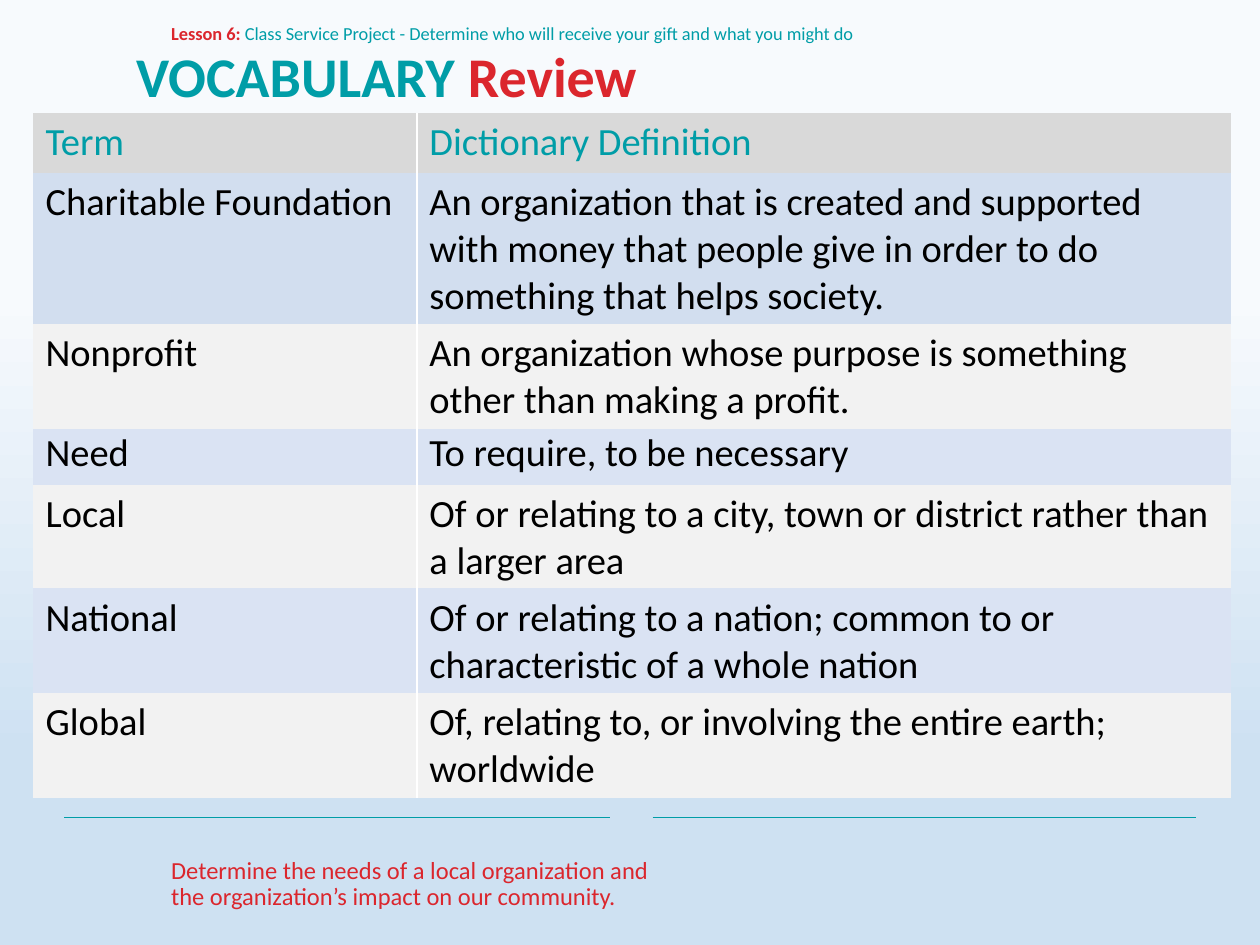
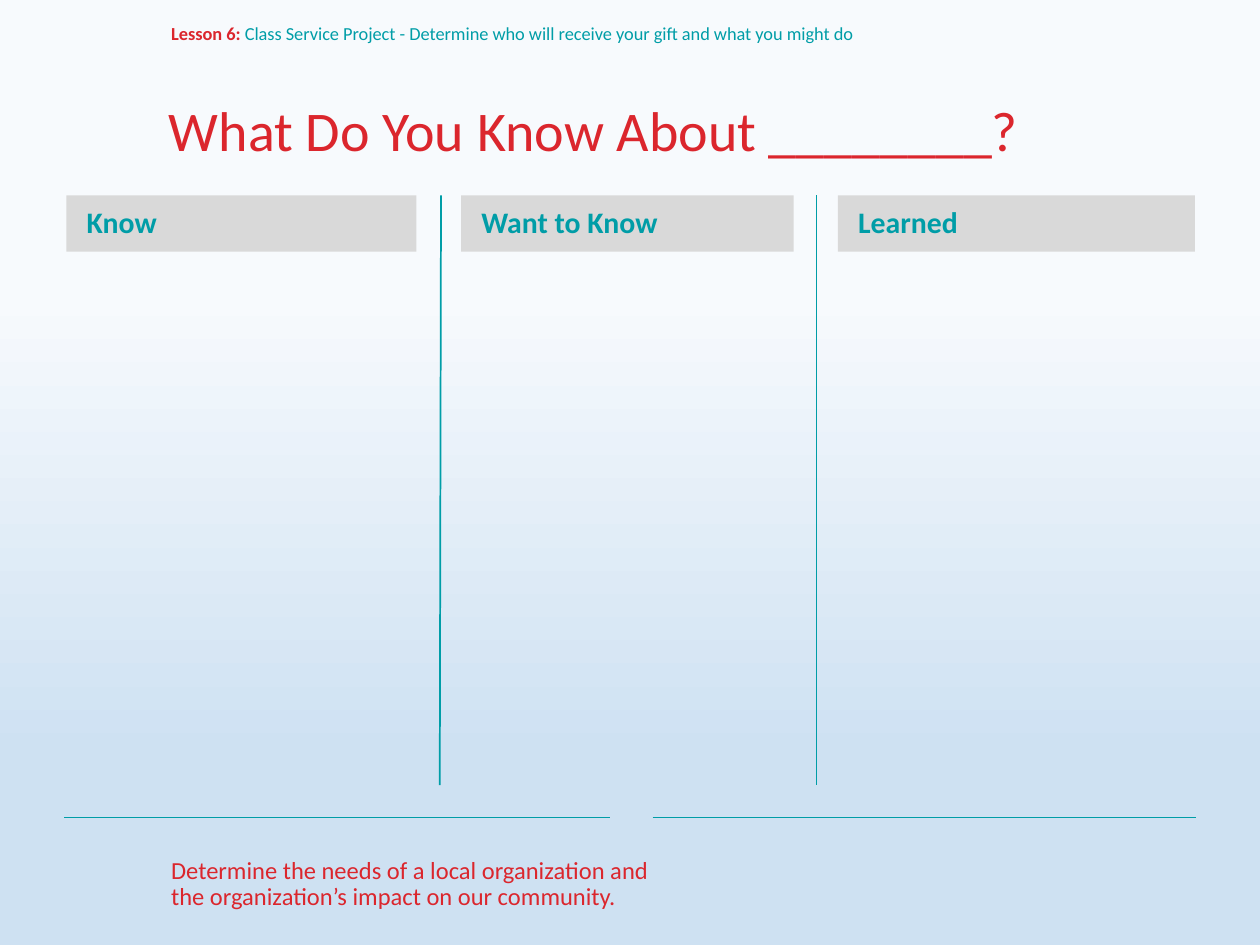
from typing import NamedTuple

from lxml.etree import SubElement
from pptx import Presentation
from pptx.dml.color import RGBColor
from pptx.enum.shapes import MSO_CONNECTOR, MSO_SHAPE
from pptx.enum.text import MSO_ANCHOR, MSO_AUTO_SIZE, PP_ALIGN
from pptx.oxml import parse_xml
from pptx.oxml.ns import nsdecls, qn
from pptx.util import Pt

COLORS = {
    "teal": "009DA7",
    "red": "DB262D",
    "black": "000000",
    "white": "FFFFFF",
    "header": "D9D9D9",
    "blue": "D2DEEF",
    "pale_blue": "DAE3F3",
    "grey": "F2F2F2",
    "sky_top": "F7FAFD",
    "sky_bottom": "CEE1F2",
}
FONT = "Calibri"
NO_TABLE_STYLE = "{2D5ABB26-0587-4C30-8999-92F81FD0307C}"


class Box(NamedTuple):
    left: float
    top: float
    width: float
    height: float

    def emu(self) -> list:
        return [Pt(v) for v in self]


class Run(NamedTuple):
    text: str
    color: str
    bold: bool = False


class Entry(NamedTuple):
    term: str
    definition: str
    height: float
    fill: str
    color: str = "black"


class VocabTable(NamedTuple):
    top: float
    entries: list[Entry]


class Column(NamedTuple):
    label: str
    left: float
    width: float


# Shared layout
FOOTER_LINES = [(36.7, 348.5), (373, 683.3)]
FOOTER_Y = 467.3
FOOTER_BOX = Box(90.7, 486.7, 290.2, 49)
LESSON_BOX = Box(90.7, 10.8, 430.6, 18.7)
FOOTER = [Run("Determine the needs of a local organization and "
              "the organization’s impact on our community.", "red")]
LESSON = [
    Run("Lesson 6: ", "red", True),
    Run("Class Service Project - Determine who will receive your gift "
        "and what you might do", "teal"),
]

# Vocabulary tables, from back to front: each one covers the overflow it meets
TABLE_LEFT = 18.9
TABLE_COLS = (219.3, 465.1)
VOCABULARY = [
    VocabTable(64.3, [
        Entry("Term", "Dictionary Definition", 34.6, "header", "teal"),
        Entry("Charitable Foundation",
              "An organization that is created and supported with money that "
              "people give in order to do something that helps society.",
              86.4, "blue"),
    ]),
    VocabTable(276.8, [
        Entry("Local", "Of or relating to a city, town or district rather "
              "than a larger area", 59.8, "grey")]),
    VocabTable(242, [
        Entry("Need", "To require, to be necessary", 35.3, "pale_blue")]),
    VocabTable(185, [
        Entry("Nonprofit", "An organization whose purpose is something other "
              "than making a profit.", 59.8, "grey")]),
    VocabTable(336.2, [
        Entry("National", "Of or relating to a nation; common to or "
              "characteristic of a whole nation", 59.8, "pale_blue")]),
    VocabTable(396, [
        Entry("Global", "Of, relating to, or involving the entire earth; "
              "worldwide", 59.8, "grey")]),
]

# Know / Want to Know / Learned chart
KWL_TOP, KWL_BOTTOM, KWL_HEAD = 111.6, 448.6, 32.2
KWL_COLUMNS = [
    Column("Know", 38, 200),
    Column("Want to Know", 263.5, 190),
    Column("Learned", 478.8, 204),
]
KWL_DIVIDERS = [(252, 251.3), (466.6, 466.6)]


def rgb(name: str) -> RGBColor:
    return RGBColor.from_string(COLORS[name])


def put_text(tf, runs: list[Run], *, size: float, spacing: float = 0.9,
             anchor=MSO_ANCHOR.TOP) -> None:
    """Fill a text frame with one left-aligned paragraph."""
    tf.word_wrap = True
    tf.vertical_anchor = anchor
    p = tf.paragraphs[0]
    p.alignment = PP_ALIGN.LEFT
    p.line_spacing = spacing
    p.space_before = Pt(0)
    for run in runs:
        r = p.add_run()
        r.text = run.text
        r.font.name = FONT
        r.font.size = Pt(size)
        r.font.bold = run.bold
        r.font.color.rgb = rgb(run.color)


def add_text(s, box: Box, runs: list[Run], size: float) -> None:
    put_text(s.shapes.add_textbox(*box.emu()).text_frame, runs, size=size)


def add_line(s, x1: float, y1: float, x2: float, y2: float,
             width: float) -> None:
    line = s.shapes.add_connector(MSO_CONNECTOR.STRAIGHT,
                                  Pt(x1), Pt(y1), Pt(x2), Pt(y2))
    line.line.color.rgb = rgb("teal")
    line.line.width = Pt(width)
    SubElement(line._element.spPr, qn("a:effectLst"))


def set_background(prs) -> None:
    fill = prs.slide_master.background.fill
    fill.gradient()
    fill.gradient_angle = 270
    stops = [("sky_top", 0.31), ("sky_bottom", 0.8)]
    for stop, (color, position) in zip(fill.gradient_stops, stops):
        stop.color.rgb = rgb(color)
        stop.position = position


def add_slide(prs, title: list[Run], title_box: Box):
    """Add a slide with the shared footer, lesson line and title."""
    s = prs.slides.add_slide(prs.slide_layouts[5])
    for x1, x2 in FOOTER_LINES:
        add_line(s, x1, FOOTER_Y, x2, FOOTER_Y, 0.5)
    add_text(s, FOOTER_BOX, FOOTER, 14)
    add_text(s, LESSON_BOX, LESSON, 10.5)
    sp = s.shapes.title
    sp.left, sp.top, sp.width, sp.height = title_box.emu()
    sp.text_frame.auto_size = MSO_AUTO_SIZE.NONE
    put_text(sp.text_frame, title, size=32)
    return s


def add_border(cell, side: str) -> None:
    cell._tc.get_or_add_tcPr().insert(0, parse_xml(
        f'<a:{side} {nsdecls("a")} w="12700"><a:solidFill>'
        f'<a:srgbClr val="{COLORS["white"]}"/></a:solidFill></a:{side}>'))


def add_vocab_table(s, vocab: VocabTable) -> None:
    entries = vocab.entries
    box = Box(TABLE_LEFT, vocab.top, sum(TABLE_COLS),
              sum(e.height for e in entries))
    table = s.shapes.add_table(len(entries), len(TABLE_COLS),
                               *box.emu()).table
    table.first_row = table.horz_banding = False
    table._tbl.tblPr.find(qn("a:tableStyleId")).text = NO_TABLE_STYLE
    for column, width in zip(table.columns, TABLE_COLS):
        column.width = Pt(width)
    for i, entry in enumerate(entries):
        table.rows[i].height = Pt(entry.height)
        for j, text in enumerate((entry.term, entry.definition)):
            cell = table.cell(i, j)
            cell.fill.solid()
            cell.fill.fore_color.rgb = rgb(entry.fill)
            add_border(cell, ("lnR", "lnL")[j])
            put_text(cell.text_frame, [Run(text, entry.color)], size=22,
                     spacing=1.0)


def add_column_head(s, column: Column) -> None:
    box = Box(column.left, KWL_TOP, column.width, KWL_HEAD)
    sp = s.shapes.add_shape(MSO_SHAPE.RECTANGLE, *box.emu())
    sp.shadow.inherit = False
    sp.fill.solid()
    sp.fill.fore_color.rgb = rgb("header")
    sp.line.fill.background()
    tf = sp.text_frame
    tf.margin_left = Pt(11.5)
    tf.margin_top = tf.margin_right = tf.margin_bottom = 0
    put_text(tf, [Run(column.label, "teal", True)], size=17,
             anchor=MSO_ANCHOR.MIDDLE)


def main() -> None:
    prs = Presentation()
    prs.slide_width, prs.slide_height = Pt(720), Pt(540)
    set_background(prs)

    # Vocabulary review
    s = add_slide(prs, [Run("VOCABULARY ", "teal", True),
                        Run("Review", "red", True)],
                  Box(70.6, 24.5, 410.4, 36))
    for vocab in VOCABULARY:
        add_vocab_table(s, vocab)

    # Know, want to know, learned
    s = add_slide(prs, [Run("What Do You Know About ________?", "red")],
                  Box(89.3, 55.4, 581, 97.2))
    for column in KWL_COLUMNS:
        add_column_head(s, column)
    for x1, x2 in KWL_DIVIDERS:
        add_line(s, x1, KWL_TOP, x2, KWL_BOTTOM, 1)

    prs.save("out.pptx")


if __name__ == "__main__":
    main()
